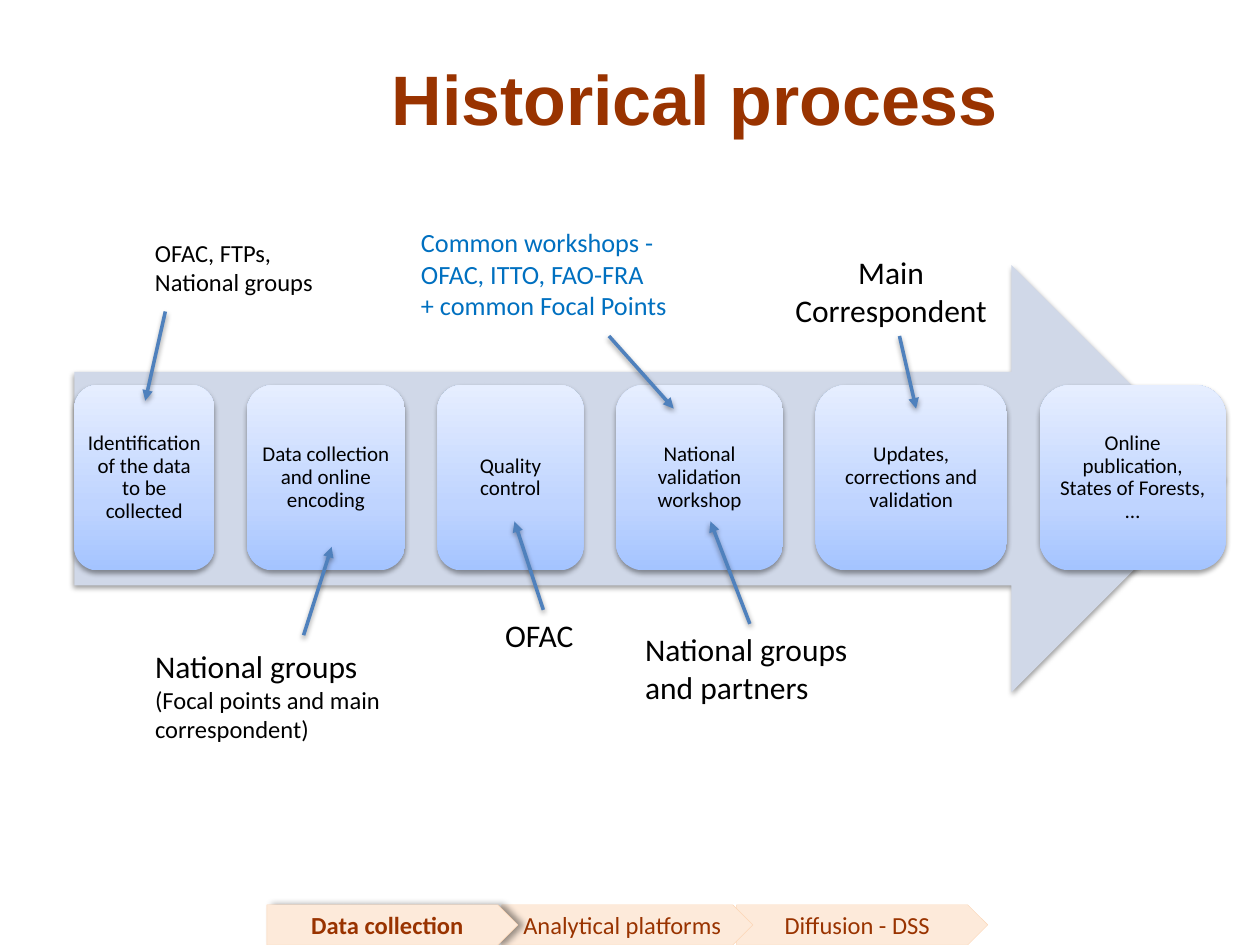
from copy import deepcopy

from lxml.etree import SubElement
from pptx import Presentation
from pptx.dml.color import RGBColor
from pptx.enum.shapes import MSO_CONNECTOR, MSO_SHAPE
from pptx.enum.text import MSO_ANCHOR, PP_ALIGN
from pptx.oxml.ns import qn
from pptx.util import Pt

BROWN, BLACK, BLUE = "993300", "000000", "0070C0"
STEP_GRADIENT = [(0, "A4C4FF"), (0.35, "BFD4FF"), (1, "E6EEFF")]
SOFT_SHADOW = {"alpha": 38, "blur": 3.1, "distance": 1.6, "angle": 90}
SIDE_SHADOW = {"alpha": 40, "blur": 4, "distance": 3, "angle": 0}


def colour(value):
    return RGBColor.from_string(value)


def cast_shadow(element, alpha, blur, distance, angle):
    effects = element.spPr.find(qn("a:effectLst"))
    if effects is None:
        effects = SubElement(element.spPr, qn("a:effectLst"))
    outer = SubElement(effects, qn("a:outerShdw"), blurRad=str(Pt(blur)),
                       dist=str(Pt(distance)), dir=str(angle * 60000), rotWithShape="0")
    black = SubElement(outer, qn("a:srgbClr"), val=BLACK)
    SubElement(black, qn("a:alpha"), val=str(alpha * 1000))


def write(frame, text, sizes=(18,), font="Calibri", color=BLACK, bold=False,
          align=PP_ALIGN.LEFT, anchor=MSO_ANCHOR.TOP, inset=None, spacing=None):
    frame.word_wrap = True
    frame.vertical_anchor = anchor
    if inset is not None:
        frame.margin_left = frame.margin_right = Pt(inset)
        frame.margin_top = frame.margin_bottom = Pt(inset)
    frame.text = text
    for index, paragraph in enumerate(frame.paragraphs):
        paragraph.alignment = align
        if spacing:
            paragraph.line_spacing = spacing
        paragraph.font.size = Pt(sizes[min(index, len(sizes) - 1)])
        paragraph.font.name = font
        paragraph.font.bold = bold
        paragraph.font.color.rgb = colour(color)


class ProcessSlide:
    """Draws the elements of a process diagram on one slide, measured in points."""

    def __init__(self, slide):
        self.shapes = slide.shapes
        self.centred = {"align": PP_ALIGN.CENTER, "anchor": MSO_ANCHOR.MIDDLE}

    def label(self, box, text, **style):
        label = self.shapes.add_textbox(*map(Pt, box))
        write(label.text_frame, text, **style)

    def block(self, preset, box, fill=None, line=None):
        block = self.shapes.add_shape(preset, *map(Pt, box))
        block.shadow.inherit = False
        if fill:
            block.fill.solid()
            block.fill.fore_color.rgb = colour(fill)
        if line:
            block.line.color.rgb = colour(line)
            block.line.width = Pt(0.25)
        else:
            block.line.fill.background()
        return block

    def band(self, box):
        band = self.block(MSO_SHAPE.RIGHT_ARROW, box, "D0D8E8")
        cast_shadow(band._element, **SOFT_SHADOW)

    def step(self, box, text):
        step = self.block(MSO_SHAPE.ROUNDED_RECTANGLE, box)
        step.fill.gradient()
        step.fill.gradient_angle = 90
        stop_list = step._element.spPr.find(".//" + qn("a:gsLst"))
        stop_list.insert(1, deepcopy(stop_list[0]))
        for stop, (position, shade) in zip(step.fill.gradient_stops, STEP_GRADIENT):
            stop.position = position
            stop.color.rgb = colour(shade)
        cast_shadow(step._element, **SOFT_SHADOW)
        write(step.text_frame, text, sizes=(12,), inset=3.6, spacing=0.9, **self.centred)

    def stage(self, box, text, current):
        stage = self.block(MSO_SHAPE.PENTAGON, box, "FDEADA", "FCD5B5")
        if current:
            cast_shadow(stage._element, **SIDE_SHADOW)
        write(stage.text_frame, text, sizes=(14,), color=BROWN, bold=current, **self.centred)

    def pointer(self, *ends):
        pointer = self.shapes.add_connector(MSO_CONNECTOR.STRAIGHT, *map(Pt, ends))
        pointer.line.color.rgb = colour("4F81BD")
        pointer.line.width = Pt(2)
        SubElement(pointer._element.spPr.find(qn("a:ln")), qn("a:tailEnd"), type="triangle")
        cast_shadow(pointer._element, **SOFT_SHADOW)


def main():
    deck = Presentation()
    deck.slide_width, deck.slide_height = Pt(720), Pt(540)
    process = ProcessSlide(deck.slides.add_slide(deck.slide_layouts[6]))

    process.label((110, 21.5, 574, 68.5), "Historical process", sizes=(40,),
                  font="Arial", color=BROWN, bold=True, **process.centred)

    stages = ["Data collection", "Analytical platforms", "Diffusion - DSS"]
    for index in reversed(range(len(stages))):
        process.stage((152.5 + 134.25 * index, 517, 143.5, 23), stages[index], index == 0)

    process.band((42.5, 151.5, 657.5, 244))
    steps = [
        ("Identification of the data to be collected", 80),
        ("Data collection and online encoding", 90.5),
        ("Quality control", 83.5),
        ("National validation workshop", 95.5),
        ("Updates, corrections and validation", 109.5),
        ("Online publication, States of Forests, …", 106.5),
    ]
    left, gap = 42.5, 18.5
    for text, width in steps:
        process.step((left, 220, width, 106), text)
        left += width + gap

    process.label((81.5, 366, 184, 63),
                  "National groups\n(Focal points and main correspondent)", sizes=(18, 14))
    process.label((361.5, 356.5, 134.5, 51), "National groups and partners")
    process.label((233.5, 126, 180.5, 62),
                  "Common workshops - OFAC, ITTO, FAO-FRA\n+ common Focal Points",
                  sizes=(15,), color=BLUE)
    process.label((281.5, 348.5, 76.5, 29), "OFAC")
    process.label((443, 141, 132.5, 51), "Main Correspondent", align=PP_ALIGN.CENTER)
    process.label((81.5, 132.5, 107.5, 41), "OFAC, FTPs, National groups", sizes=(14,))

    for ends in [
        (173.5, 363, 189.5, 312.5),
        (428.5, 356.5, 406, 298),
        (348, 192, 385, 233.5),
        (310.5, 348.5, 294, 298),
        (514, 192, 523.5, 233.5),
        (94.5, 178, 83, 229),
    ]:
        process.pointer(*ends)

    deck.save("out.pptx")


if __name__ == "__main__":
    main()
